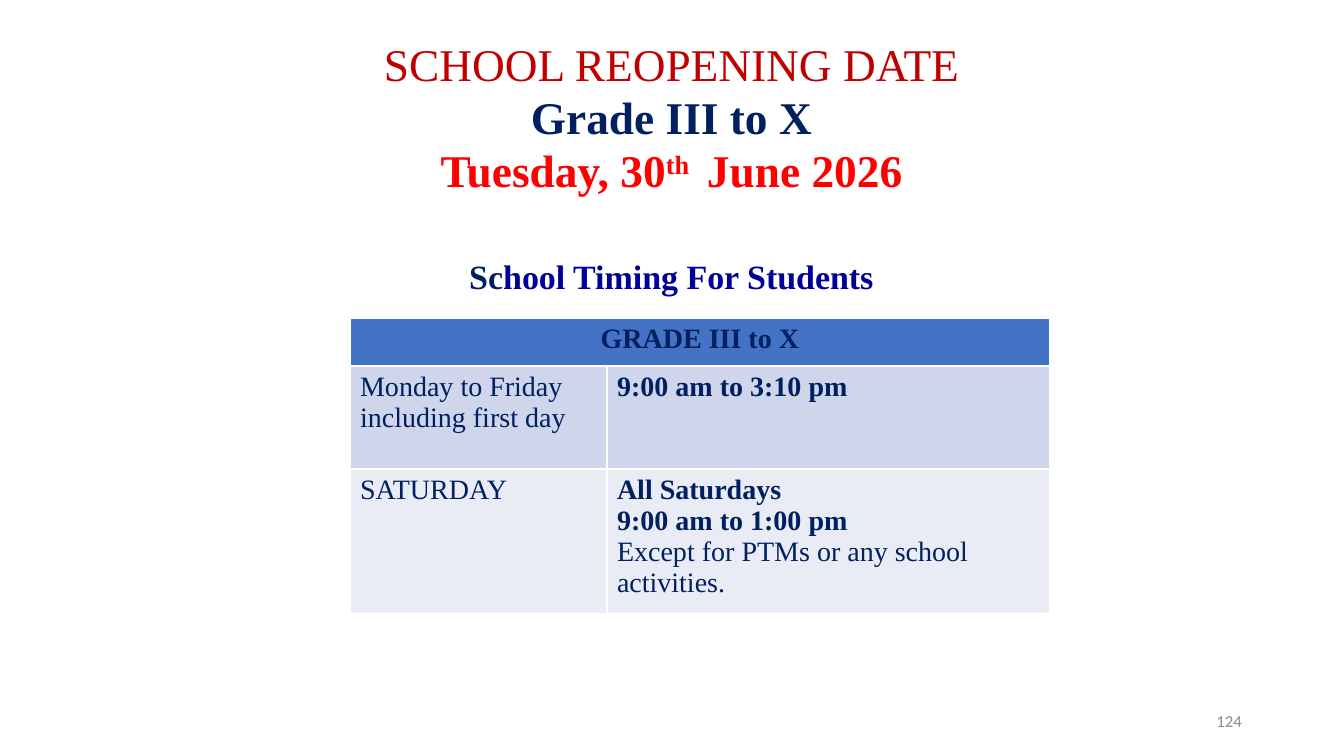
from pptx import Presentation
from pptx.dml.color import RGBColor
from pptx.enum.text import MSO_ANCHOR, MSO_AUTO_SIZE, PP_ALIGN
from pptx.util import Emu, Pt

LEFT, CENTER, RIGHT = PP_ALIGN.LEFT, PP_ALIGN.CENTER, PP_ALIGN.RIGHT
MIDDLE = MSO_ANCHOR.MIDDLE
NO_AUTOFIT = MSO_AUTO_SIZE.NONE
TITLE_ONLY = 5
SERIF, SANS = "Times New Roman", "Calibri"
NAVY, INDIGO, RED, CRIMSON = "002060", "000099", "FF0000", "C00000"
GREY, HEADER_BLUE, BAND_DARK, BAND_LIGHT = "8C8C8C", "4472C4", "CFD5EA", "E9EBF5"


def px(count):
    return Emu(round(count * 914400 / 100.8))


def color(value):
    return RGBColor.from_string(value)


def add_span(para, text, size=20, name=SERIF, ink=NAVY, bold=False, raised=False):
    span = para.add_run()
    span.text = text
    span.font.size = Pt(size)
    span.font.name = name
    span.font.bold = bold
    span.font.color.rgb = color(ink)
    if raised:
        span._r.get_or_add_rPr().set("baseline", "30000")


def fill_frame(frame, lines, align=LEFT, spacing=None):
    for index, spans in enumerate(lines):
        para = frame.paragraphs[0] if index == 0 else frame.add_paragraph()
        para.alignment = align
        para.space_before = Pt(0)
        if spacing:
            para.line_spacing = spacing
        for text, style in spans:
            add_span(para, text, **style)


class NoticePage:
    """Holds the deck and the current slide, and adds each kind of element."""

    def __init__(self):
        self.deck = Presentation()
        self.deck.slide_width, self.deck.slide_height = px(1344), px(756)
        self.page = self.deck.slides.add_slide(self.deck.slide_layouts[TITLE_ONLY])

    def title(self, left, top, width, height, lines, gap_before_last):
        box = self.page.shapes.title
        box.left, box.top, box.width, box.height = map(px, (left, top, width, height))
        frame = box.text_frame
        frame.word_wrap = True
        frame.auto_size = NO_AUTOFIT
        frame.vertical_anchor = MIDDLE
        fill_frame(frame, lines, CENTER, 0.98)
        frame.paragraphs[-1].space_before = Pt(gap_before_last)

    def text(self, left, top, width, height, lines, align):
        box = self.page.shapes.add_textbox(*map(px, (left, top, width, height)))
        box.text_frame.word_wrap = True
        box.text_frame.vertical_anchor = MIDDLE
        fill_frame(box.text_frame, lines, align)

    def timetable(self, left, top, widths, heights, heading, rows, bands):
        frame = self.page.shapes.add_table(
            len(heights), len(widths), px(left), px(top), px(sum(widths)), px(sum(heights)))
        table = frame.table
        for column, width in zip(table.columns, widths):
            column.width = px(width)
        for row, height in zip(table.rows, heights):
            row.height = px(height)
        header = table.cell(0, 0)
        header.merge(table.cell(0, len(widths) - 1))
        self.cell(header, [heading], HEADER_BLUE, CENTER)
        for row_index, (row, band) in enumerate(zip(rows, bands), 1):
            for column_index, lines in enumerate(row):
                self.cell(table.cell(row_index, column_index), lines, band)

    def cell(self, cell, lines, fill, align=LEFT):
        cell.fill.solid()
        cell.fill.fore_color.rgb = color(fill)
        fill_frame(cell.text_frame, lines, align)


def main():
    plain, strong = {}, {"bold": True}
    heading = {"size": 32.4, "bold": True}
    date = {**heading, "ink": RED}
    subtitle = {"size": 24.3, "bold": True}

    notice = NoticePage()
    notice.title(163, 40, 1017, 256, [
        [("SCHOOL REOPENING DATE", {"size": 32.4, "ink": CRIMSON})],
        [("Grade III to X", heading)],
        [("Tuesday, 30", date), ("th ", {**date, "raised": True}), (" June 2026", date)],
        [("Sc", subtitle), ("hool Timing For Students", {**subtitle, "ink": INDIGO})],
    ], gap_before_last=42)
    notice.text(950, 701, 302, 40,
                [[("124", {"size": 12, "name": SANS, "ink": GREY})]], RIGHT)
    notice.timetable(
        350, 318, [257, 443], [48, 103, 145],
        [("GRADE III to X", strong)],
        [
            [[[("Monday to Friday including first day", plain)]],
             [[("9:00 am to 3:10 pm", strong)]]],
            [[[("SATURDAY", plain)]],
             [[("All Saturdays", strong)],
              [("9:00 am to 1:00 pm", strong)],
              [("Except for PTMs or any school activities.", plain)]]],
        ],
        [BAND_DARK, BAND_LIGHT])
    notice.deck.save("out.pptx")


if __name__ == "__main__":
    main()
